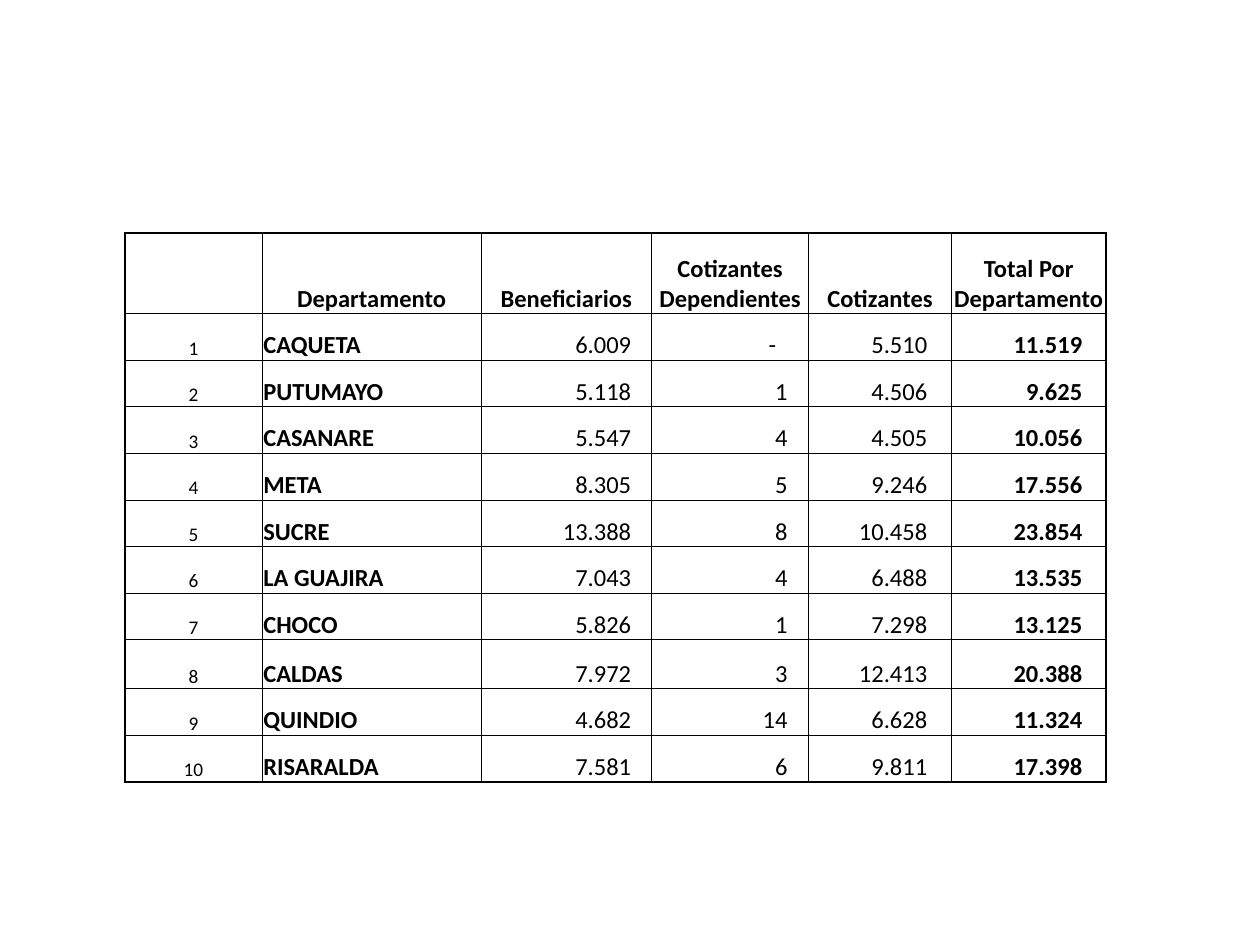
import pptx
import pptx.dml.color
import pptx.enum.text
import pptx.oxml
import pptx.oxml.ns
import pptx.util

Inches = pptx.util.Inches
ALIGN = pptx.enum.text.PP_ALIGN

COLORS = {"text": "000000", "border": "000000", "cell": "FFFFFF"}
OUTER_BORDER, INNER_BORDER = 1, 0.5
CELL_INSET = 0.01

HEADERS = ["", "Departamento", "Beneficiarios", "Cotizantes Dependientes",
           "Cotizantes", "Total Por Departamento"]
DEPARTMENTS = [
    ("CAQUETA", "6.009", "-", "5.510", "11.519"),
    ("PUTUMAYO", "5.118", "1", "4.506", "9.625"),
    ("CASANARE", "5.547", "4", "4.505", "10.056"),
    ("META", "8.305", "5", "9.246", "17.556"),
    ("SUCRE", "13.388", "8", "10.458", "23.854"),
    ("LA GUAJIRA", "7.043", "4", "6.488", "13.535"),
    ("CHOCO", "5.826", "1", "7.298", "13.125"),
    ("CALDAS", "7.972", "3", "12.413", "20.388"),
    ("QUINDIO", "4.682", "14", "6.628", "11.324"),
    ("RISARALDA", "7.581", "6", "9.811", "17.398"),
]
COLUMN_WIDTHS = [1.09, 1.74, 1.35, 1.25, 1.13, 1.23]
ROW_HEIGHTS = [0.64] + [0.37] * 7 + [0.39] + [0.37] * 2

# Format of the body cells, one entry for each column
COLUMN_FORMATS = [
    {"size": 11, "align": ALIGN.CENTER},
    {"bold": True},
    {"align": ALIGN.RIGHT, "right": 0.16},
    {"align": ALIGN.RIGHT, "right": 0.17},
    {"align": ALIGN.RIGHT, "right": 0.19},
    {"align": ALIGN.RIGHT, "right": 0.19, "bold": True},
]
HEADER_FORMAT = {"bold": True, "align": ALIGN.CENTER}


def write_text(cell, text, size=14, bold=False, align=ALIGN.LEFT, right=CELL_INSET):
    cell.vertical_anchor = pptx.enum.text.MSO_ANCHOR.BOTTOM
    cell.margin_left = cell.margin_top = Inches(CELL_INSET)
    cell.margin_right = Inches(right)
    cell.margin_bottom = 0
    paragraph = cell.text_frame.paragraphs[0]
    paragraph.alignment = align
    paragraph.font.size = pptx.util.Pt(size)
    if text:
        run = paragraph.add_run()
        run.text = text
        run.font.name = "Calibri"
        run.font.size = pptx.util.Pt(size)
        run.font.bold = bold
        run.font.color.rgb = pptx.dml.color.RGBColor.from_string(COLORS["text"])


class SlideBuilder:
    def __init__(self, presentation):
        self.colors = COLORS
        self.slide = presentation.slides.add_slide(presentation.slide_layouts[6])

    def style_cell(self, cell, outer_sides):
        properties = cell._tc.get_or_add_tcPr()
        for side in "LRTB":
            width = OUTER_BORDER if side in outer_sides else INNER_BORDER
            properties.append(pptx.oxml.parse_xml(
                f'<a:ln{side} {pptx.oxml.ns.nsdecls("a")} w="{pptx.util.Pt(width)}">'
                f'<a:solidFill><a:srgbClr val="{self.colors["border"]}"/></a:solidFill>'
                f'</a:ln{side}>'))
        cell.fill.solid()
        cell.fill.fore_color.rgb = pptx.dml.color.RGBColor.from_string(self.colors["cell"])

    def add_table(self, left, top, rows):
        last_row, last_column = len(rows) - 1, len(COLUMN_WIDTHS) - 1
        table = self.slide.shapes.add_table(
            len(rows), len(COLUMN_WIDTHS), Inches(left), Inches(top),
            Inches(sum(COLUMN_WIDTHS)), Inches(sum(ROW_HEIGHTS))).table
        table.first_row = table.horz_banding = False
        for column, width in zip(table.columns, COLUMN_WIDTHS):
            column.width = Inches(width)
        for row, height in zip(table.rows, ROW_HEIGHTS):
            row.height = Inches(height)

        for i, values in enumerate(rows):
            for j, text in enumerate(values):
                cell = table.cell(i, j)
                cell_format = dict(COLUMN_FORMATS[j] if i else HEADER_FORMAT)
                if text == "-":
                    cell_format["right"] = 0.26
                write_text(cell, text, **cell_format)
                edges = {"L": j == 0, "R": j == last_column,
                         "T": i == 0, "B": i == last_row}
                self.style_cell(cell, [side for side in edges if edges[side]])


def main():
    presentation = pptx.Presentation()
    presentation.slide_width = Inches(10)
    presentation.slide_height = Inches(7.5)

    # Departments, numbered from 1 below the header row
    numbered = [(str(number), *values) for number, values in enumerate(DEPARTMENTS, 1)]
    SlideBuilder(presentation).add_table(0.99, 1.85, [HEADERS] + numbered)

    presentation.save("out.pptx")


if __name__ == "__main__":
    main()
